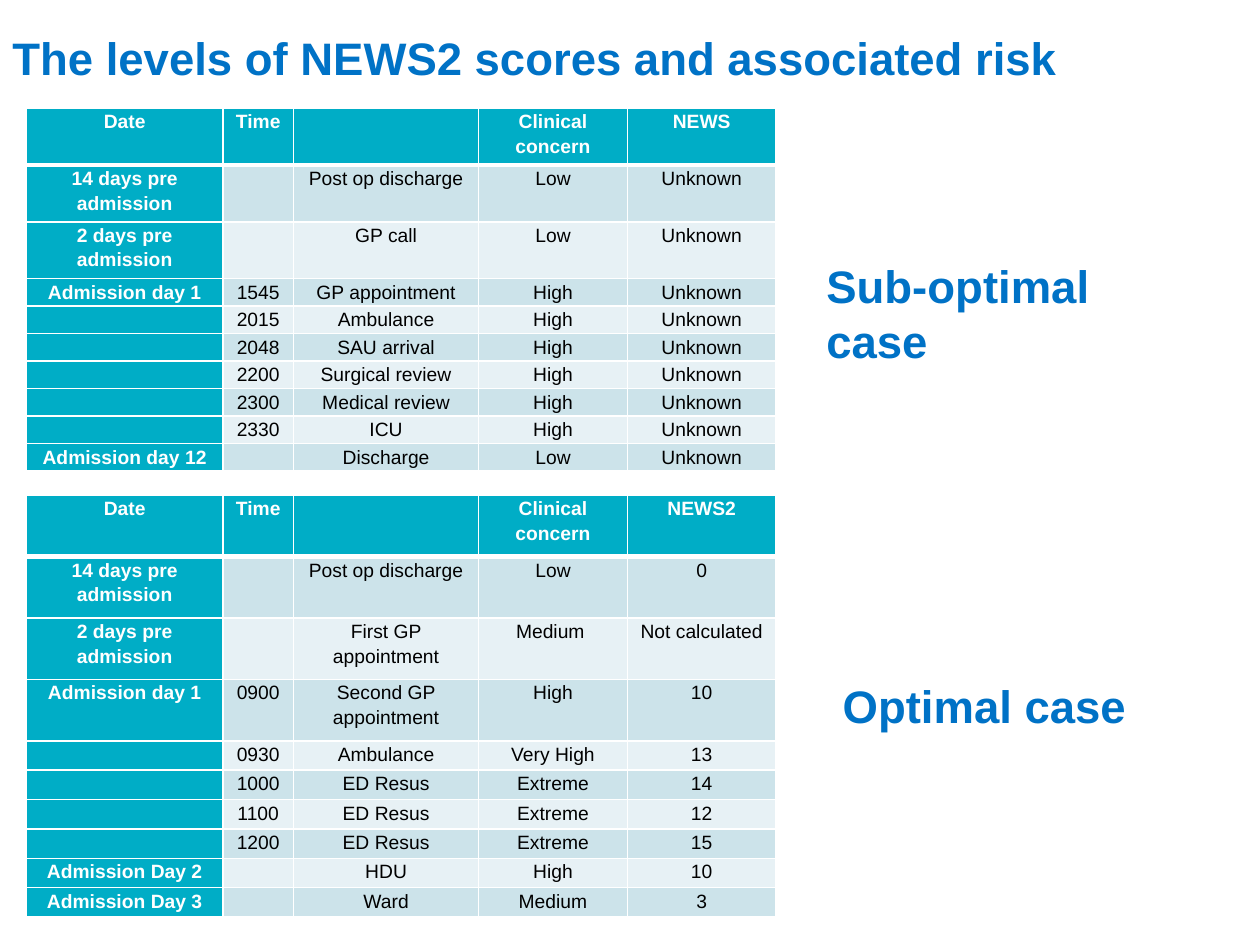
"""Build a slide that sets a sub-optimal case against an optimal one by NEWS2 score."""
import pptx
import pptx.util
import pptx.dml.color
import pptx.enum.text
import pptx.oxml
import pptx.oxml.ns

HUES = {"head": "00ADC6", "odd": "CCE3EA", "even": "E7F1F5",
        "blue": "0072C6", "white": "FFFFFF", "black": "000000"}
FONT = "Arial"
WIDE, HIGH = 10, 7.5
COLS = [15.6, 5.6, 14.7, 11.8, 11.8]
LEFT = 2.1

LABELS = [
    ("The levels of NEWS2 scores and associated risk", (0, 1.2, 86.4, 9.73)),
    ("Sub-optimal case", (64.6, 26.67, 31.9, 7.2)),
    ("Optimal case", (65.9, 71.07, 29.4, 7.2)),
]

CASES = [
    {"top": 11.47, "high": 38.4, "tall": 6, "count": 3, "rows": [
        ("Date", "Time", "", "Clinical concern", "NEWS"),
        ("14 days pre admission", "", "Post op discharge", "Low", "Unknown"),
        ("2 days pre admission", "", "GP call", "Low", "Unknown"),
        ("Admission day 1", "1545", "GP appointment", "High", "Unknown"),
        ("", "2015", "Ambulance", "High", "Unknown"),
        ("", "2048", "SAU arrival", "High", "Unknown"),
        ("", "2200", "Surgical review", "High", "Unknown"),
        ("", "2300", "Medical review", "High", "Unknown"),
        ("", "2330", "ICU", "High", "Unknown"),
        ("Admission day 12", "", "Discharge", "Low", "Unknown"),
    ]},
    {"top": 52.4, "high": 44.67, "tall": 6.5, "count": 4, "rows": [
        ("Date", "Time", "", "Clinical concern", "NEWS2"),
        ("14 days pre admission", "", "Post op discharge", "Low", "0"),
        ("2 days pre admission", "", "First GP appointment", "Medium ", "Not calculated"),
        ("Admission day 1", "0900", "Second GP appointment", "High", "10"),
        ("", "0930", "Ambulance", "Very High", "13"),
        ("", "1000", "ED Resus", "Extreme", "14"),
        ("", "1100", "ED Resus", "Extreme", "12"),
        ("", "1200", "ED Resus", "Extreme", "15"),
        ("Admission Day 2", "", "HDU", "High", "10"),
        ("Admission Day 3", "", "Ward", "Medium", "3"),
    ]},
]


def across(share):
    return pptx.util.Inches(WIDE * share / 100)


def down(share):
    return pptx.util.Inches(HIGH * share / 100)


def tint(name):
    return pptx.dml.color.RGBColor.from_string(HUES[name])


def style(para, size, hue, bold):
    for run in para.runs:
        font = run.font
        font.name, font.size, font.bold = FONT, pptx.util.Pt(size), bold
        font.color.rgb = tint(hue)


def edge(cell, side, width):
    line = pptx.oxml.parse_xml(
        f'<a:{side} {pptx.oxml.ns.nsdecls("a")} w="{pptx.util.Pt(width)}">'
        f'<a:solidFill><a:srgbClr val="{HUES["white"]}"/></a:solidFill></a:{side}>')
    cell._tc.get_or_add_tcPr().append(line)


def fill(cell, text, row, col, last):
    head = row == 0 or col == 0
    for side in ("lnL", "lnR", "lnT", "lnB"):
        thick = (side == "lnB" and row == 0) or (side == "lnT" and row == 1)
        edge(cell, side, 3 if thick else 1)
    cell.fill.solid()
    cell.fill.fore_color.rgb = tint("head" if head else "odd" if row % 2 else "even")
    cell.margin_left = cell.margin_right = pptx.util.Inches(0.07)
    cell.margin_top = cell.margin_bottom = 0
    cell.text_frame.text = text
    para = cell.text_frame.paragraphs[0]
    para.alignment = pptx.enum.text.PP_ALIGN.CENTER
    para.line_spacing = 1.15
    para.space_after = pptx.util.Pt(6)
    style(para, 11, "white" if head else "black", head)
    if not text:
        para._p.append(pptx.oxml.parse_xml(
            f'<a:endParaRPr {pptx.oxml.ns.nsdecls("a")} sz="1100"/>'))


def label(slide, text, box):
    x, y, w, h = box
    frame = slide.shapes.add_textbox(across(x), down(y), across(w), down(h)).text_frame
    frame.word_wrap = True
    if y < 10:
        frame.vertical_anchor = pptx.enum.text.MSO_ANCHOR.MIDDLE
    frame.text = text
    style(frame.paragraphs[0], 26, "blue", True)


def grid(slide, case):
    rows, tall, count = case["rows"], case["tall"], case["count"]
    low = (case["high"] - tall * count) / (len(rows) - count)
    table = slide.shapes.add_table(
        len(rows), len(COLS), across(LEFT), down(case["top"]),
        across(sum(COLS)), down(case["high"])).table
    for col, share in zip(table.columns, COLS):
        col.width = across(share)
    for r, texts in enumerate(rows):
        table.rows[r].height = down(tall if r < count else low)
        for c, text in enumerate(texts):
            fill(table.cell(r, c), text, r, c, len(rows) - 1)


def main():
    deck = pptx.Presentation()
    deck.slide_width, deck.slide_height = across(100), down(100)
    slide = deck.slides.add_slide(deck.slide_layouts[6])
    for text, box in LABELS:
        label(slide, text, box)
    for case in CASES:
        grid(slide, case)
    deck.save("out.pptx")


if __name__ == "__main__":
    main()
